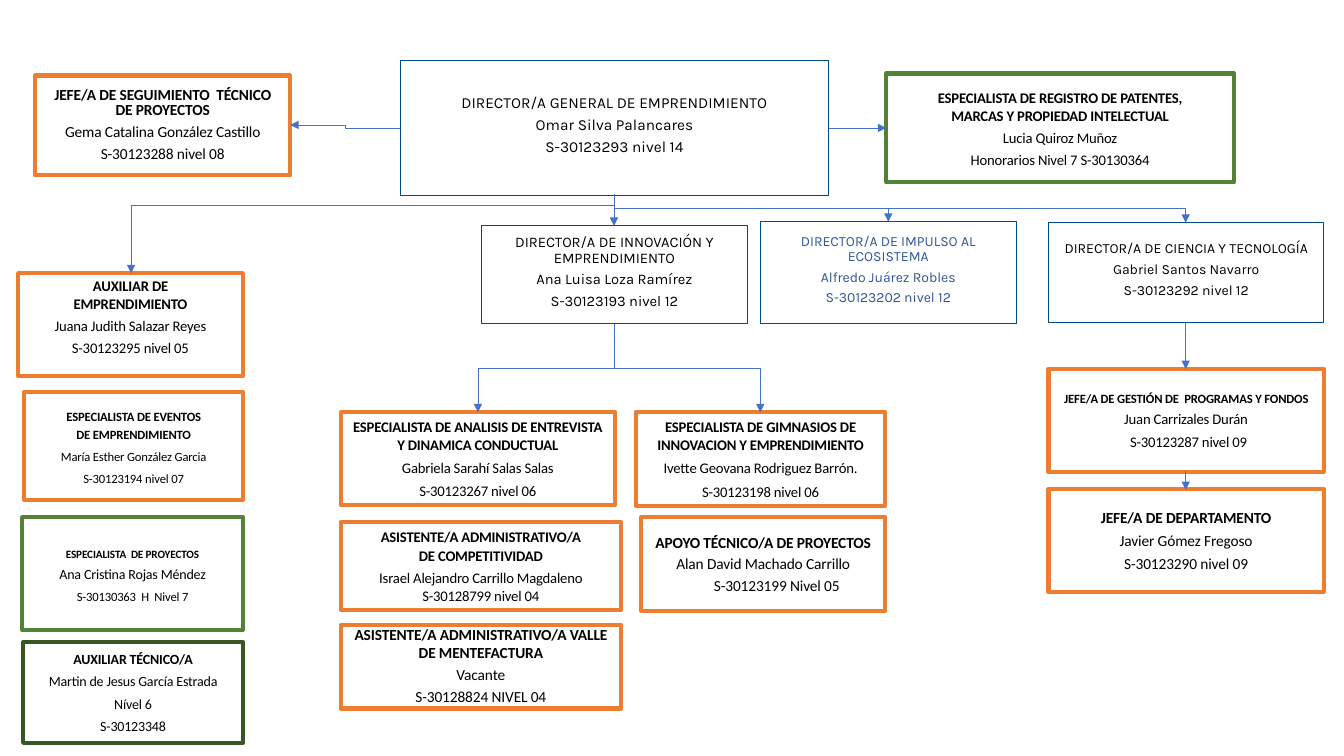
import pptx
import pptx.dml.color
import pptx.enum.shapes
import pptx.enum.text
import pptx.oxml
import pptx.oxml.ns
import pptx.util
from pptx.util import Inches

COLORS = {
    "white": "FFFFFF", "black": "000000", "text_blue": "2F5597",
    "navy": "004A86", "orange": "ED7D31", "green": "548235",
    "dark_green": "385723", "connector": "4472C4",
}

# Side margin in inches, line spacing (points or multiple), points before, points after
STYLES = {
    "director": (0, 0.9, 0, 4),
    "wide": (0.25, pptx.util.Pt(13), 2.6, 0),
    "narrow": (0.01, pptx.util.Pt(13), 2.6, 0),
    "chief": (0.01, pptx.util.Pt(10.8), 2.3, 0),
    "chief_detail": (0.11, pptx.util.Pt(15), 0.8, 0),
    "loose": (0, 1.0, 4, 0),
    "plain": (0, 1.0, 0, 0),
    "airy": (0.19, 1.25, 0, 0),
}

# Left, top, right, bottom
INSETS = {
    "director": (0.01, 0.01, 0.01, 0.06),
    "staff": (0.1, 0.05, 0.1, 0.05),
    "raised": (0.1, 0.05, 0.1, 0.22),
    "tight": (0.1, 0, 0.1, 0.03),
}

# Position, line colour, text colour, kind, title and detail styles, (text, size) lines
BOXES = [
    ((3.97, 0.6, 4.25, 1.34), "navy", "black", "director", "director", "director",
     [("DIRECTOR/A GENERAL DE EMPRENDIMIENTO", 11), ("Omar Silva Palancares", 11),
      ("S-30123293 nivel 14", 11)]),
    ((4.78, 2.24, 2.63, 0.97), "navy", "black", "director", "director", "director",
     [("DIRECTOR/A DE INNOVACIÓN Y EMPRENDIMIENTO", 10.5), ("Ana Luisa Loza Ramírez", 10.5),
      ("S-30123193 nivel 12", 10.5)]),
    ((7.54, 2.2, 2.54, 1.01), "navy", "text_blue", "director", "director", "director",
     [("DIRECTOR/A DE IMPULSO AL ECOSISTEMA", 10), ("Alfredo Juárez Robles", 10),
      ("S-30123202 nivel 12", 10)]),
    ((10.4, 2.21, 2.73, 0.99), "navy", "black", "director", "director", "director",
     [("DIRECTOR/A DE CIENCIA Y TECNOLOGÍA", 10), ("Gabriel Santos Navarro", 10),
      ("S-30123292 nivel 12", 10)]),
    ((0.35, 0.75, 2.53, 0.99), "orange", "black", "staff", "chief", "chief_detail",
     [("JEFE/A DE SEGUIMIENTO  TÉCNICO DE PROYECTOS", 11),
      ("Gema Catalina González Castillo", 11), ("S-30123288 nivel 08", 11)]),
    ((8.79, 0.73, 3.45, 1.08), "green", "black", "staff", "wide", "wide",
     [("ESPECIALISTA DE REGISTRO DE PATENTES, MARCAS Y PROPIEDAD INTELECTUAL", 10.5),
      ("Lucia Quiroz Muñoz", 10.5), ("Honorarios Nivel 7 S-30130364", 10.5)]),
    ((0.18, 2.71, 2.23, 1.02), "orange", "black", "raised", "wide", "wide",
     [("AUXILIAR DE EMPRENDIMIENTO", 10.5), ("Juana Judith Salazar Reyes", 10.5),
      ("S-30123295 nivel 05", 10.5)]),
    ((0.24, 3.89, 2.17, 1.07), "orange", "black", "staff", "wide", "wide",
     [("ESPECIALISTA DE EVENTOS DE EMPRENDIMIENTO", 9), ("María Esther González Garcia", 9),
      ("S-30123194 nivel 07", 9)]),
    ((0.22, 5.13, 2.19, 1.12), "green", "black", "staff", "wide", "wide",
     [("ESPECIALISTA  DE PROYECTOS", 8), ("Ana Cristina Rojas Méndez", 10),
      ("S-30130363  H  Nivel 7", 9)]),
    ((0.23, 6.37, 2.18, 1), "dark_green", "black", "staff", "loose", "loose",
     [("AUXILIAR TÉCNICO/A", 10), ("Martin de Jesus García Estrada", 10),
      ("Nível 6", 10), ("S-30123348", 10)]),
    ((3.38, 4.09, 2.72, 0.92), "orange", "black", "staff", "loose", "loose",
     [("ESPECIALISTA DE ANALISIS DE ENTREVISTA Y DINAMICA CONDUCTUAL", 10.5),
      ("Gabriela Sarahí Salas Salas", 10.5), ("S-30123267 nivel 06", 10.5)]),
    ((3.38, 5.18, 2.78, 0.87), "orange", "black", "staff", "wide", "wide",
     [("ASISTENTE/A ADMINISTRATIVO/A DE COMPETITIVIDAD", 10.5),
      ("Israel Alejandro Carrillo Magdaleno S-30128799 nivel 04", 10.5)]),
    ((3.38, 6.2, 2.78, 0.83), "orange", "black", "tight", "plain", "wide",
     [("ASISTENTE/A ADMINISTRATIVO/A VALLE DE MENTEFACTURA", 11), ("Vacante", 11),
      ("S-30128824 NIVEL 04", 11)]),
    ((6.31, 4.09, 2.47, 0.93), "orange", "black", "staff", "loose", "loose",
     [("ESPECIALISTA DE GIMNASIOS DE INNOVACION Y EMPRENDIMIENTO", 10.5),
      ("Ivette Geovana Rodriguez Barrón.", 10.5), ("S-30123198 nivel 06", 10.5)]),
    ((6.36, 5.13, 2.42, 0.93), "orange", "black", "staff", "narrow", "narrow",
     [("APOYO TÉCNICO/A DE PROYECTOS", 11), ("Alan David Machado Carrillo", 11),
      ("S-30123199 Nivel 05", 11)]),
    ((10.4, 3.66, 2.73, 1.02), "orange", "black", "staff", "chief", "chief_detail",
     [("JEFE/A DE GESTIÓN DE  PROGRAMAS Y FONDOS", 9), ("Juan Carrizales Durán", 10.5),
      ("S-30123287 nivel 09", 10.5)]),
    ((10.4, 4.85, 2.73, 1.02), "orange", "black", "staff", "loose", "airy",
     [("JEFE/A DE DEPARTAMENTO", 11), ("Javier Gómez Fregoso", 11),
      ("S-30123290 nivel 09", 11)]),
]
# Lines pushed to the right of the centre, by extra left margin in inches
SHIFTED = {"S-30123199 Nivel 05": 0.27, "S-30123287 nivel 09": 0.05}

# Start, end, and where the bend lies along the drop (None: not a vertical elbow)
CONNECTORS = [
    ((3.97, 1.27), (2.88, 1.24), None),
    ((8.22, 1.27), (8.79, 1.27), None),
    ((6.09, 1.93), (6.09, 2.24), None),
    ((11.76, 3.2), (11.76, 3.66), None),
    ((11.76, 4.67), (11.76, 4.86), None),
    ((6.09, 3.21), (4.74, 4.09), 0.5),
    ((6.09, 3.21), (7.54, 4.09), 0.5),
    ((6.09, 1.93), (1.3, 2.71), 0.142),
    ((6.09, 1.93), (8.81, 2.2), 0.5),
    ((6.09, 1.93), (11.76, 2.21), 0.5),
]


def rgb(name):
    return pptx.dml.color.RGBColor.from_string(COLORS[name])


def add_arrow(slide, start, end, bend):
    """Draw an arrow; with a bend it leaves downwards, turns sideways and drops again."""
    (x1, y1), (x2, y2) = start, end
    straight = x1 == x2 or y1 == y2
    kinds = pptx.enum.shapes.MSO_CONNECTOR
    ends = (x1, y1, x2, y2)
    if bend is not None:
        middle_x, middle_y = (x1 + x2) / 2, (y1 + y2) / 2
        half_drop, half_span = (y2 - y1) / 2, abs(x2 - x1) / 2
        ends = (middle_x - half_drop, middle_y - half_span,
                middle_x + half_drop, middle_y + half_span)
    connector = slide.shapes.add_connector(
        kinds.STRAIGHT if straight else kinds.ELBOW, *map(Inches, ends))
    connector.line.color.rgb = rgb("connector")
    connector.line.width = pptx.util.Pt(0.5)
    properties = connector._element.spPr
    if bend is not None:
        frame = properties.find(pptx.oxml.ns.qn("a:xfrm"))
        frame.set("rot", "16200000" if x2 > x1 else "5400000")
        if x2 > x1:
            frame.set("flipH", "1")
        guides = properties.find(pptx.oxml.ns.qn("a:prstGeom")).get_or_add_avLst()
        guide = guides.makeelement(pptx.oxml.ns.qn("a:gd"), {
            "name": "adj1", "fmla": f"val {round(bend * 100000)}"})
        guides.append(guide)
    line = connector.line._get_or_add_ln()
    line.append(line.makeelement(pptx.oxml.ns.qn("a:tailEnd"), {"type": "triangle"}))
    properties.append(properties.makeelement(pptx.oxml.ns.qn("a:effectLst"), {}))


presentation = pptx.Presentation()
presentation.slide_width = Inches(13.33)
presentation.slide_height = Inches(7.5)
slide = presentation.slides.add_slide(presentation.slide_layouts[6])

for position, line_color, text_color, kind, title_style, detail_style, lines in BOXES:
    is_director = kind == "director"
    shape = slide.shapes.add_shape(
        pptx.enum.shapes.MSO_SHAPE.RECTANGLE, *map(Inches, position))
    shape.shadow.inherit = False
    if is_director:
        shape.fill.solid()
        shape.fill.fore_color.rgb = rgb("white")
    else:
        shape.fill.background()
    shape.line.color.rgb = rgb(line_color)
    shape.line.width = pptx.util.Pt(0.75 if is_director else 3)

    frame = shape.text_frame
    frame.word_wrap = True
    frame.vertical_anchor = pptx.enum.text.MSO_ANCHOR.MIDDLE
    (frame.margin_left, frame.margin_top,
     frame.margin_right, frame.margin_bottom) = map(Inches, INSETS[kind])

    for index, (text, size) in enumerate(lines):
        paragraph = frame.paragraphs[0] if index == 0 else frame.add_paragraph()
        margin, spacing, before, after = STYLES[detail_style if index else title_style]
        paragraph.alignment = pptx.enum.text.PP_ALIGN.CENTER
        paragraph.line_spacing = spacing
        paragraph.space_before = pptx.util.Pt(before)
        paragraph.space_after = pptx.util.Pt(after)
        paragraph_properties = paragraph._p.get_or_add_pPr()
        paragraph_properties.set("marL", str(Inches(margin + SHIFTED.get(text, 0))))
        paragraph_properties.set("marR", str(Inches(margin)))
        run = paragraph.add_run()
        run.text = text
        run.font.name = "Karla" if is_director else "Calibri"
        run.font.size = pptx.util.Pt(size)
        run.font.bold = index == 0 and not is_director
        run.font.color.rgb = rgb(text_color)
        if not is_director:
            run._r.get_or_add_rPr().set("spc", "-10")

for start, end, bend in CONNECTORS:
    add_arrow(slide, start, end, bend)

presentation.save("out.pptx")
